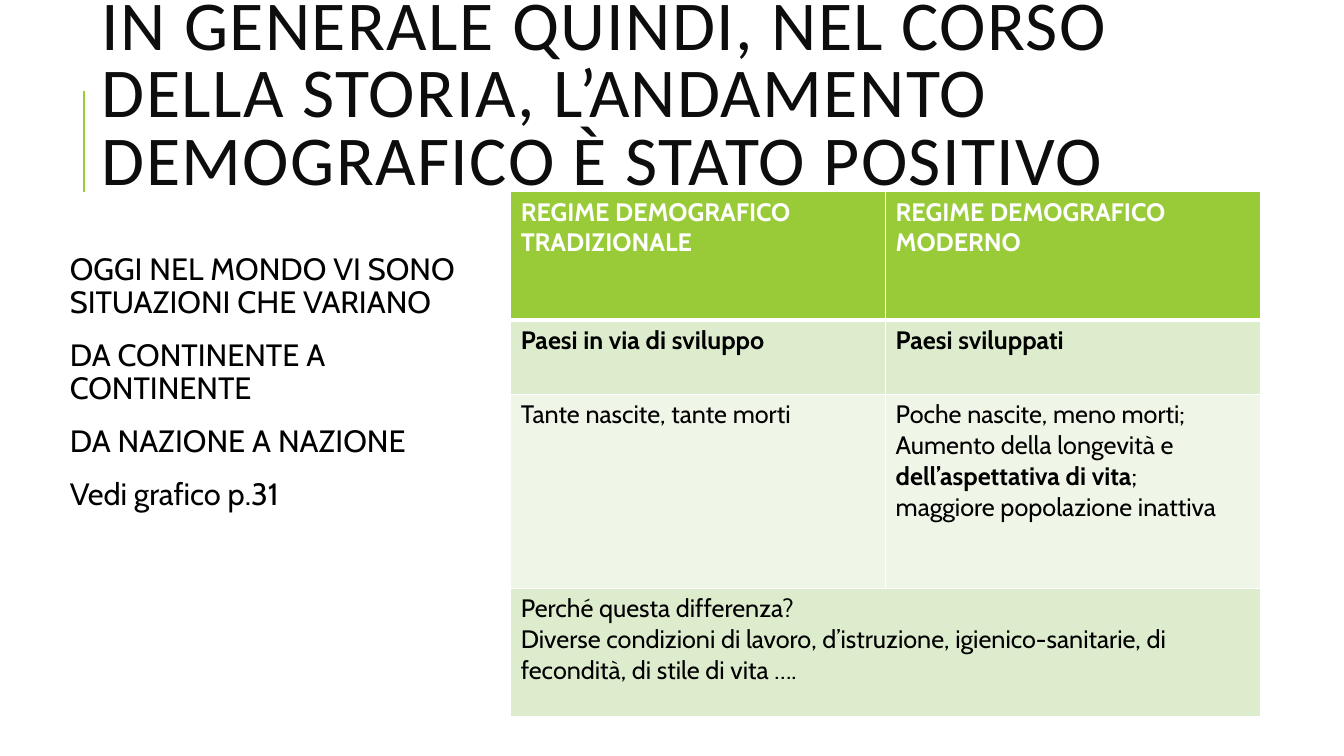
from dataclasses import dataclass

from pptx import Presentation
from pptx.dml.color import RGBColor
from pptx.enum.shapes import MSO_CONNECTOR
from pptx.enum.text import MSO_ANCHOR, MSO_AUTO_SIZE, PP_ALIGN
from pptx.oxml.ns import qn
from pptx.util import Cm, Pt
from lxml.etree import SubElement


@dataclass(frozen=True)
class Theme:
    green: str = "99CB38"
    mid: str = "DEECCE"
    pale: str = "EFF6E8"
    white: str = "FFFFFF"
    black: str = "000000"
    ink: str = "0D0D0D"
    head: str = "Calibri"
    text: str = "Cabin"
    big: int = 50
    list: int = 22
    cell: int = 18


theme = Theme()


def write(frame, lines, font, size, color, form):
    """Fill a frame with one paragraph a line; text between asterisks is bold."""
    for i, line in enumerate(lines):
        para = frame.paragraphs[0] if i == 0 else frame.add_paragraph()
        for key, value in form.items():
            setattr(para, key, value)
        for j, part in enumerate(line.split("*")):
            if part:
                run = para.add_run()
                run.text = part
                look = {"name": font, "size": Pt(size), "bold": j % 2 == 1}
                for key, value in look.items():
                    setattr(run.font, key, value)
                run.font.color.rgb = RGBColor.from_string(color)


def edge(props, side, width):
    """Draw one white border of a table cell."""
    line = SubElement(props, qn(f"a:ln{side}"), w=str(Pt(width)))
    fill = SubElement(line, qn("a:solidFill"))
    SubElement(fill, qn("a:srgbClr"), val=theme.white)


deck = Presentation()
deck.slide_width, deck.slide_height = Cm(33.87), Cm(19.05)
slide = deck.slides.add_slide(deck.slide_layouts[1])

# Accent line beside the title
rule = slide.shapes.add_connector(
    MSO_CONNECTOR.STRAIGHT, Cm(2.12), Cm(4.83), Cm(2.12), Cm(2.29))
rule.line.color.rgb = RGBColor.from_string(theme.green)
rule.line.width = Pt(1.5)
SubElement(rule._element.spPr, qn("a:effectLst"))

# Title and list
title, body = slide.shapes.title, slide.placeholders[1]
places = [
    (title, (2.31, 0.38, 27, 4.17)),
    (body, (1.63, 6.27, 10.57, 11.68)),
]
for shape, place in places:
    for key, value in zip(("left", "top", "width", "height"), place):
        setattr(shape, key, Cm(value))
    shape.text_frame.auto_size = MSO_AUTO_SIZE.NONE
    shape.text_frame.word_wrap = True

title.text_frame.vertical_anchor = MSO_ANCHOR.MIDDLE
write(title.text_frame,
      ["IN GENERALE QUINDI, NEL CORSO DELLA STORIA, "
       "L’ANDAMENTO DEMOGRAFICO È STATO POSITIVO"],
      theme.head, theme.big, theme.ink,
      {"line_spacing": 0.8, "alignment": PP_ALIGN.LEFT})
title.text_frame.paragraphs[0].runs[0].font._element.set("spc", "100")

for side in ("left", "top", "right", "bottom"):
    setattr(body.text_frame, f"margin_{side}", Cm(0.13))
write(body.text_frame,
      ["OGGI NEL MONDO VI SONO SITUAZIONI CHE VARIANO",
       "DA CONTINENTE A CONTINENTE",
       "DA NAZIONE A NAZIONE",
       "Vedi grafico p.31"],
      theme.text, theme.list, theme.black,
      {"line_spacing": 0.9, "space_before": Pt(12), "space_after": Pt(2)})
for para in body.text_frame.paragraphs:
    props = para._p.get_or_add_pPr()
    props.set("marL", "0")
    props.set("indent", "0")
    SubElement(props, qn("a:buNone"))

# Table: height, fill, text colour and cells of each row
rows = [
    (3.23, theme.green, theme.white,
     [["*REGIME DEMOGRAFICO TRADIZIONALE*"], ["*REGIME DEMOGRAFICO MODERNO*"]]),
    (1.88, theme.mid, theme.black,
     [["*Paesi in via di sviluppo*"], ["*Paesi sviluppati*"]]),
    (4.88, theme.pale, theme.black,
     [["Tante nascite, tante morti"],
      ["Poche nascite, meno morti;",
       "Aumento della longevità e *dell’aspettativa di vita*;",
       "maggiore popolazione inattiva"]]),
    (3.23, theme.mid, theme.black,
     [["Perché questa differenza?",
       "Diverse condizioni di lavoro, d’istruzione, igienico-sanitarie, "
       "di fecondità, di stile di vita …."], []]),
]
high = sum(row[0] for row in rows)
table = slide.shapes.add_table(
    len(rows), 2, Cm(12.87), Cm(4.83), Cm(18.9), Cm(high)).table
for r, (height, fill, color, cells) in enumerate(rows):
    table.rows[r].height = Cm(height)
    for c, lines in enumerate(cells):
        cell = table.cell(r, c)
        props = cell._tc.get_or_add_tcPr()
        for side in "LRTB":
            thick = (r, side) in ((0, "B"), (1, "T"))
            edge(props, side, 3 if thick else 1)
        cell.fill.solid()
        cell.fill.fore_color.rgb = RGBColor.from_string(fill)
        write(cell.text_frame, lines, theme.text, theme.cell, color, {})
table.cell(3, 0).merge(table.cell(3, 1))

deck.save("out.pptx")
